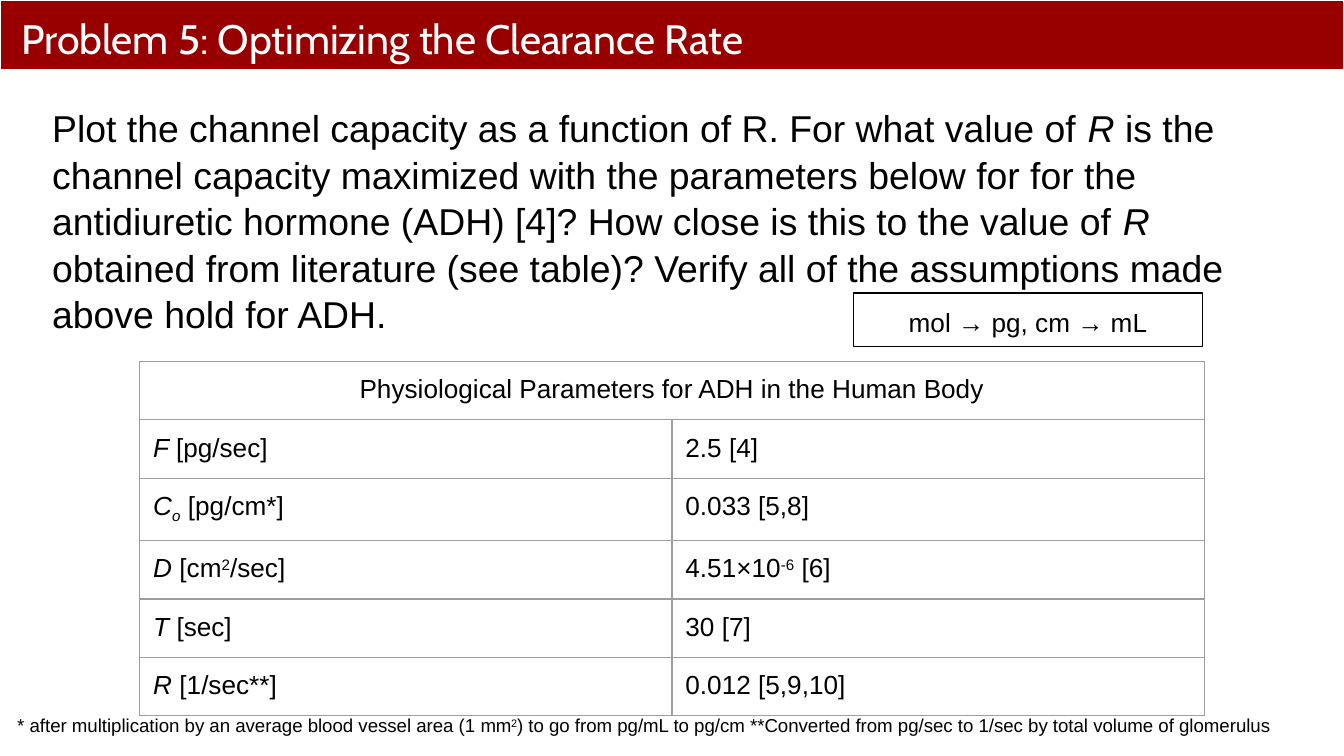
from lxml import etree
from pptx import Presentation
from pptx.dml.color import RGBColor
from pptx.enum.shapes import MSO_SHAPE
from pptx.enum.text import MSO_ANCHOR, PP_ALIGN
from pptx.oxml.ns import qn
from pptx.util import Inches, Pt

RECTANGLE = MSO_SHAPE.RECTANGLE
TOP = MSO_ANCHOR.TOP
LEFT, CENTER = PP_ALIGN.LEFT, PP_ALIGN.CENTER

WIDTH, HEIGHT = 10, 10 * 9 / 16
COLUMNS = 100
COLORS = {"banner": "980000", "paper": "FFFFFF", "ink": "000000", "grid": "9E9E9E"}
VARIANTS = {"italic": {"italic": True}}
BASELINES = {"sup": 30000, "sub": -25000}
EDGES = ("a:lnL", "a:lnR", "a:lnT", "a:lnB")


class ProblemSlide:
    """Holds the style and the current slide, placing elements on a square grid."""

    def __init__(self, deck, font="Arial"):
        self.slide = deck.slides.add_slide(deck.slide_layouts[6])
        self.font = font

    def grid(self, *cells):
        return [Inches(cell * WIDTH / COLUMNS) for cell in cells]

    def typeset(self, frame, runs, size, color="ink", font=None, align=LEFT, spacing=1.0):
        paragraph = frame.paragraphs[0]
        for name, value in {"alignment": align, "line_spacing": spacing}.items():
            setattr(paragraph, name, value)
        for words, *marks in runs:
            run = paragraph.add_run()
            run.text = words
            look = {"name": font or self.font, "size": Pt(size), "italic": False}
            for mark in marks:
                look.update(VARIANTS.get(mark, {}))
                if mark in BASELINES:
                    run._r.get_or_add_rPr().set("baseline", str(BASELINES[mark]))
            for name, value in look.items():
                setattr(run.font, name, value)
            run.font.color.rgb = RGBColor.from_string(COLORS[color])

    def prepare(self, frame, inset=1):
        margin, side = self.grid(1, inset)
        layout = {"word_wrap": True, "vertical_anchor": TOP, "margin_left": side,
                  "margin_right": margin, "margin_top": margin, "margin_bottom": margin}
        for name, value in layout.items():
            setattr(frame, name, value)
        return frame

    def text(self, area, runs, size, **style):
        words = self.slide.shapes.add_textbox(*self.grid(*area))
        self.typeset(self.prepare(words.text_frame), runs, size, **style)

    def box(self, area, runs, size, line, fill=None, inset=1, **style):
        panel = self.slide.shapes.add_shape(RECTANGLE, *self.grid(*area))
        panel.shadow.inherit = False
        if fill:
            panel.fill.solid()
            panel.fill.fore_color.rgb = RGBColor.from_string(COLORS[fill])
        else:
            panel.fill.background()
        panel.line.color.rgb = RGBColor.from_string(COLORS[line])
        panel.line.width = Pt(0.75)
        self.typeset(self.prepare(panel.text_frame, inset), runs, size, **style)

    def outline(self, cell):
        properties = cell._tc.get_or_add_tcPr()
        for position, edge in enumerate(EDGES):
            border = etree.Element(qn(edge), w=str(Pt(0.75)))
            paint = etree.SubElement(border, qn("a:solidFill"))
            etree.SubElement(paint, qn("a:srgbClr"), val=COLORS["grid"])
            properties.insert(position, border)

    def table(self, area, heading, rows, size):
        parameters = self.slide.shapes.add_table(
            len(rows) + 1, len(rows[0]), *self.grid(*area)).table
        for name in ("first_row", "horz_banding"):
            setattr(parameters, name, False)
        parameters.cell(0, 0).merge(parameters.cell(0, len(rows[0]) - 1))
        margin, = self.grid(1)
        for cell in parameters.iter_cells():
            cell.fill.background()
            self.outline(cell)
            for side in ("left", "right", "top", "bottom"):
                setattr(cell, f"margin_{side}", margin)
        self.typeset(parameters.cell(0, 0).text_frame, heading, size, align=CENTER)
        for row, entries in enumerate(rows, 1):
            for column, runs in enumerate(entries):
                self.typeset(parameters.cell(row, column).text_frame, runs, size)


def main():
    deck = Presentation()
    deck.slide_width, deck.slide_height = Inches(WIDTH), Inches(HEIGHT)
    problem = ProblemSlide(deck)
    problem.box((0, 0, 100, 5.2), [("Problem 5: Optimizing the Clearance Rate",)], 22,
                line="paper", fill="banner", inset=1.6, color="paper", font="Cabin")
    question = [
        ("Plot the channel capacity as a function of R. For what value of ",),
        ("R", "italic"),
        (" is the channel capacity maximized with the parameters below for for the "
         "antidiuretic hormone (ADH) [4]? How close is this to the value of ",),
        ("R", "italic"),
        (" obtained from literature (see table)? Verify all of the assumptions made "
         "above hold for ADH.",),
    ]
    problem.text((2.9, 6.7, 89.7, 44.2), question, 20, spacing=1.04)
    parameters = [
        ([("F ", "italic"), ("[pg/sec]",)], [("2.5 [4]",)]),
        ([("C", "italic"), ("o", "italic", "sub"), (" [pg/cm*]",)], [("0.033 [5,8]",)]),
        ([("D", "italic"), (" [cm",), ("2", "sup"), ("/sec]",)],
         [("4.51×10",), ("-6", "sup"), (" [6]",)]),
        ([("T ", "italic"), ("[sec]",)], [("30 [7]",)]),
        ([("R ", "italic"), ("[1/sec**]",)], [("0.012 [5,9,10]",)]),
    ]
    problem.table((10.4, 26.9, 79.2, 25), [("Physiological Parameters for ADH in the Human Body",)],
                  parameters, 14)
    problem.box((63.5, 21.8, 26, 4), [("mol → pg, cm → mL",)], 14, line="ink", align=CENTER)
    footnote = [
        ("* after multiplication by an average blood vessel area (1 mm",), ("2", "sup"),
        (") to go from pg/mL to pg/cm **Converted from pg/sec to 1/sec "
         "by total volume of glomerulus",),
    ]
    problem.text((0.3, 52.3, 99.4, 3.9), footnote, 10)
    deck.save("out.pptx")


if __name__ == "__main__":
    main()
